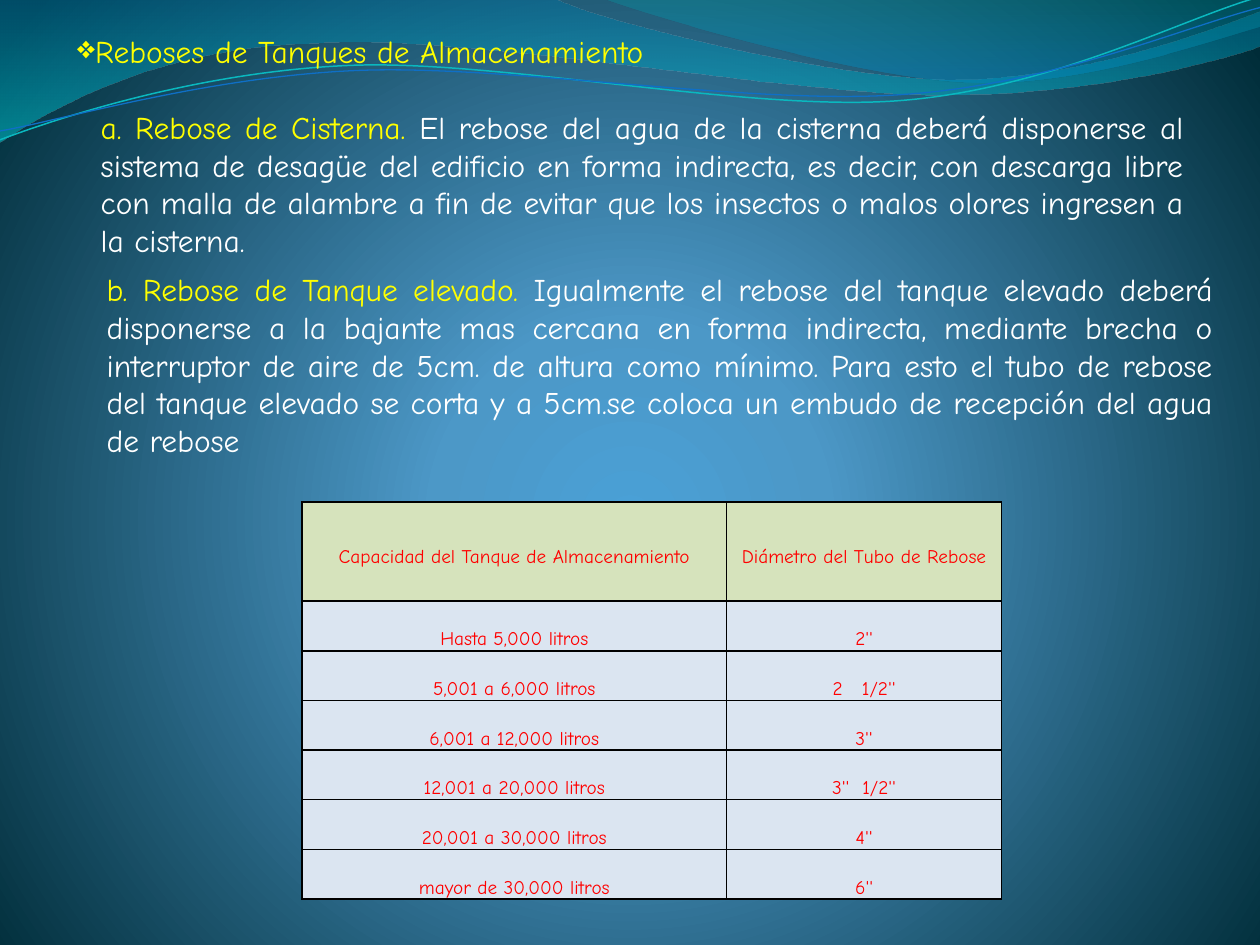
from lxml import etree
from pptx import Presentation
from pptx.dml.color import RGBColor
from pptx.enum.text import MSO_ANCHOR, MSO_AUTO_SIZE, PP_ALIGN
from pptx.oxml.ns import qn
from pptx.util import Cm, Pt

LEFT, CENTER, JUST = PP_ALIGN.LEFT, PP_ALIGN.CENTER, PP_ALIGN.JUSTIFY
TOP, MIDDLE, BOTTOM = MSO_ANCHOR.TOP, MSO_ANCHOR.MIDDLE, MSO_ANCHOR.BOTTOM
NO_FIT = MSO_AUTO_SIZE.NONE

FONT = "Comic Neue"
YELLOW = RGBColor(0xFF, 0xFF, 0x00)
WHITE = RGBColor(0xFF, 0xFF, 0xFF)
RED = RGBColor(0xFF, 0x00, 0x00)
BLACK = RGBColor(0x00, 0x00, 0x00)
GREEN = RGBColor(0xD6, 0xE3, 0xBC)
PALE = RGBColor(0xDB, 0xE5, 0xF1)
SKY = RGBColor(0x4A, 0xA0, 0xD6)
BLUE = RGBColor(0x4C, 0x98, 0xC7)
NIGHT = RGBColor(0x00, 0x2C, 0x38)
SEA = RGBColor(0x00, 0x74, 0xA1)
AQUA = RGBColor(0x00, 0xC6, 0xCF)
TEAL = RGBColor(0x00, 0xA1, 0xA9)
AZURE = RGBColor(0x00, 0x8B, 0xBF)
CYAN = RGBColor(0x0A, 0xB8, 0xBF)
ROYAL = RGBColor(0x0F, 0x6F, 0xC6)


def write(par, text, size=18, color=WHITE, align=JUST):
    par.alignment = align
    run = par.add_run()
    run.text = text
    font = run.font
    font.name, font.size, font.bold = FONT, Pt(size), False
    font.color.rgb = color


def grade(props, stops, round_=False):
    """Set (position, colour, opacity) stops, in percent, on the gradient in props."""
    grad = next(props.iter(qn("a:gradFill")))
    for child in list(grad):
        grad.remove(child)
    group = etree.SubElement(grad, qn("a:gsLst"))
    for pos, color, alpha in stops:
        stop = etree.SubElement(group, qn("a:gs"), pos=str(pos * 1000))
        tint = etree.SubElement(stop, qn("a:srgbClr"), val=str(color))
        etree.SubElement(tint, qn("a:alpha"), val=str(alpha * 1000))
    if round_:
        way = etree.SubElement(grad, qn("a:path"), path="circle")
        etree.SubElement(way, qn("a:fillToRect"), l="10000", t="110000", r="10000", b="100000")
    else:
        etree.SubElement(grad, qn("a:lin"), ang="5400000", scaled="1")


deck = Presentation()
deck.slide_width, deck.slide_height = Cm(25.4), Cm(19.05)
slide = deck.slides.add_slide(deck.slide_layouts[5])
shapes = slide.shapes

slide.background.fill.gradient()
grade(slide.element, [(0, SKY, 100), (25, BLUE, 100), (100, NIGHT, 100)], round_=True)

# Waves: start point, then lines (x, y) and curves (two handles and an end), in inches
BAND = [(0, 0), (4.4, -0.01), (4.76, 0.17, 6.64, 0.63, 7.58, 0.63),
        (8.53, 0.63, 9.58, 0.26, 10, 0.09), (10.01, 0.36),
        (9.83, 0.44, 8.7, 0.76, 7.46, 0.75), (6.22, 0.75, 3.82, 0.28, 2.57, 0.34),
        (1.29, 0.36, 0.46, 0.83, -0.01, 1.13), (0, 0)]
CREST = [(4.79, -0.01), (5.09, 0.11, 6.82, 0.62, 7.69, 0.65),
         (8.56, 0.69, 9.61, 0.32, 10, 0.21), (10, 0), (4.79, -0.01)]
UPPER = [(0, 1.11), (0.48, 0.93, 1.58, 0.57, 2.77, 0.52),
         (3.95, 0.47, 5.93, 0.89, 7.13, 0.8), (8.33, 0.71, 9.38, 0.15, 9.98, -0.02)]
LOWER = [(0, 1.04), (0.47, 0.96, 1.64, 0.61, 2.83, 0.56),
         (4.03, 0.51, 5.97, 0.84, 7.17, 0.75), (8.36, 0.67, 9.41, 0.21, 10, 0.06)]
for route, stops, color, width in (
    (BAND, [(0, SEA, 45), (100, AQUA, 55)], None, 0),
    (CREST, [(0, TEAL, 30), (80, AZURE, 45)], None, 0),
    (UPPER, None, CYAN, 0.85),
    (LOWER, None, ROYAL, 0.75),
):
    dots = [(Cm(2.54 * x), Cm(2.54 * y))
            for part in route for x, y in zip(part[::2], part[1::2])]
    pen = shapes.build_freeform(*dots[0])
    pen.add_line_segments(dots[1:], close=stops is not None)
    wave = pen.convert_to_shape()
    wave.shadow.inherit = False

    # Join the three points of each curve into one Bézier segment
    legs = iter(list(wave.element.iter(qn("a:lnTo"))))
    for part in route[1:]:
        leg = next(legs)
        if len(part) == 6:
            curve = etree.Element(qn("a:cubicBezTo"))
            leg.addprevious(curve)
            for item in (leg, next(legs), next(legs)):
                curve.append(item[0])
                item.getparent().remove(item)

    if stops:
        wave.fill.gradient()
        grade(wave.element.spPr, stops)
        wave.line.fill.background()
    else:
        wave.fill.background()
        wave.line.color.rgb = color
        wave.line.width = Pt(width)

# Title, brought in front of the waves
title = shapes.title
title.element.getparent().append(title.element)
title.left, title.top, title.width, title.height = Cm(1.3), Cm(0.52), Cm(22.8), Cm(0.94)
frame = title.text_frame
frame.auto_size, frame.vertical_anchor, frame.word_wrap = NO_FIT, TOP, True
head = frame.paragraphs[0]
write(head, "Reboses de Tanques de Almacenamiento", color=YELLOW, align=LEFT)
props = head._p.get_or_add_pPr()
props.set("marL", "0")
props.set("indent", "0")
etree.SubElement(props, qn("a:buFont"), typeface="OpenSymbol")
etree.SubElement(props, qn("a:buChar"), char="❖")

for left, top, width, height, lead, body in (
    (1.78, 2.05, 22.33, 3.3, "a. Rebose de Cisterna. ",
     "El rebose del agua de la cisterna deberá disponerse al sistema de desagüe del edificio "
     "en forma indirecta, es decir, con descarga libre con malla de alambre a fin de evitar "
     "que los insectos o malos olores ingresen a la cisterna."),
    (1.9, 5.32, 22.8, 4.11, "b. Rebose de Tanque elevado. ",
     "Igualmente el rebose del tanque elevado deberá disponerse a la bajante mas cercana en "
     "forma indirecta, mediante brecha o interruptor de aire de 5cm. de altura como mínimo. "
     "Para esto el tubo de rebose del tanque elevado se corta y a 5cm.se coloca un embudo de "
     "recepción del agua de rebose"),
):
    frame = shapes.add_textbox(Cm(left), Cm(top), Cm(width), Cm(height)).text_frame
    frame.word_wrap = True
    write(frame.paragraphs[0], lead, color=YELLOW)
    write(frame.paragraphs[0], body)

ROWS = [
    ("Capacidad del Tanque de Almacenamiento", "Diámetro del Tubo de Rebose"),
    ("Hasta 5,000 litros", "2''"),
    ("5,001 a 6,000 litros", "2   1/2''"),
    ("6,001 a 12,000 litros", "3''"),
    ("12,001 a 20,000 litros", "3''  1/2''"),
    ("20,001 a 30,000 litros", "4''"),
    ("mayor de 30,000 litros", "6''"),
]
table = shapes.add_table(len(ROWS), 2, Cm(6.09), Cm(10.12), Cm(14.1), Cm(8)).table
table.first_row = table.horz_banding = False
table.columns[0].width, table.columns[1].width = Cm(8.56), Cm(5.54)
for r, row in enumerate(ROWS):
    table.rows[r].height = Cm(1 if r else 2)
    for c, text in enumerate(row):
        cell = table.cell(r, c)
        cell.margin_left = cell.margin_right = Cm(0.13)
        cell.margin_top = cell.margin_bottom = 0
        cell.vertical_anchor = BOTTOM if r else MIDDLE
        props = cell._tc.get_or_add_tcPr()
        for side in ("a:lnL", "a:lnR", "a:lnT", "a:lnB"):
            edge = etree.SubElement(props, qn(side), w=str(Pt(1)))
            ink = etree.SubElement(edge, qn("a:solidFill"))
            etree.SubElement(ink, qn("a:srgbClr"), val=str(BLACK))
        cell.fill.solid()
        cell.fill.fore_color.rgb = PALE if r else GREEN
        par = cell.text_frame.paragraphs[0]
        par.line_spacing, par.space_after = 1.5, Pt(10)
        write(par, text, size=11, color=RED, align=CENTER)

deck.save("out.pptx")
